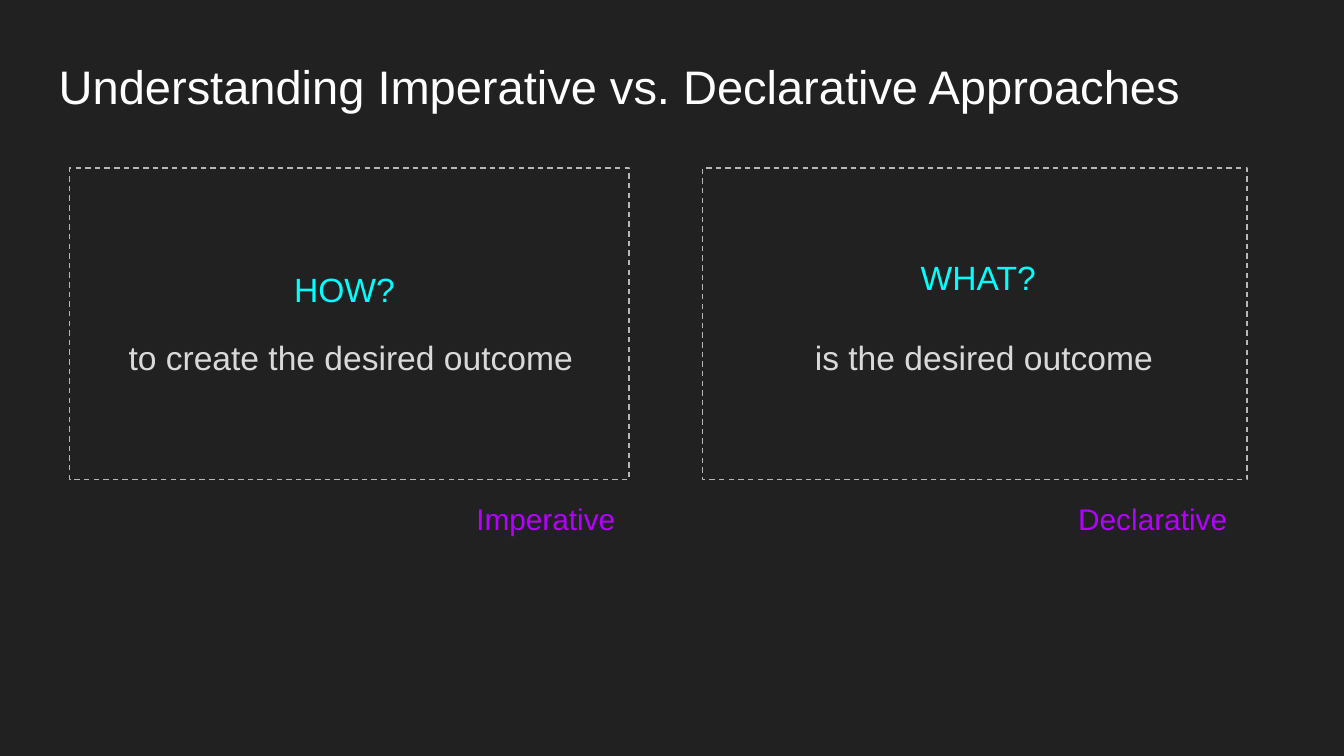
from pptx import Presentation
from pptx.util import Cm, Pt
from pptx.dml.color import RGBColor as Rgb
from pptx.enum.dml import MSO_LINE as Dash
from pptx.enum.shapes import MSO_SHAPE as Shape
from pptx.enum.text import MSO_ANCHOR as Anchor, PP_ALIGN as Align

TITLE = "Understanding Imperative vs. Declarative Approaches"
BACK, WHITE, CYAN, PURPLE, PALE, GRAY = (
    "212121", "FFFFFF", "00FFFF", "B400FF", "D9D9D9", "B7B7B7")
TOP, HIGH, ROW = 3.18, 5.89, 1.22
SIDES = [
    {"frame": (1.32, 10.57),
     "texts": [
         ("Imperative", (7.82, 9.22, 4.06, ROW), 16, PURPLE, Align.RIGHT),
         ("HOW?", (5.31, 4.83, 3.23, ROW), 18, CYAN, Align.LEFT),
         ("to create the desired outcome", (2.18, 6.12, 9.07, 2 * ROW),
          18, PALE, Align.LEFT)]},
    {"frame": (13.28, 10.29),
     "texts": [
         ("Declarative ", (19.41, 9.22, 4.19, ROW), 16, PURPLE, Align.RIGHT),
         ("WHAT?", (17.15, 4.6, 3.23, ROW), 18, CYAN, Align.LEFT),
         ("is the desired outcome", (14.86, 6.12, 7.47, ROW),
          18, PALE, Align.CENTER)]},
]


def paint(code):
    return Rgb.from_string(code)


def write(shapes, text, place, size, color, align, anchor=Anchor.TOP):
    frame = shapes.add_textbox(*map(Cm, place)).text_frame
    frame.word_wrap = True
    frame.vertical_anchor = anchor
    frame.margin_left = frame.margin_right = Cm(0.25)
    frame.margin_top = frame.margin_bottom = Cm(0.25)
    para = frame.paragraphs[0]
    para.alignment = align
    run = para.add_run()
    run.text = text
    run.font.name = "Arial"
    run.font.size = Pt(size)
    run.font.color.rgb = paint(color)


def outline(shapes, left, width):
    box = shapes.add_shape(
        Shape.RECTANGLE, Cm(left), Cm(TOP), Cm(width), Cm(HIGH))
    box.shadow.inherit = False
    box.fill.background()
    box.line.color.rgb = paint(GRAY)
    box.line.width = Pt(0.75)
    box.line.dash_style = Dash.DASH


def main():
    deck = Presentation()
    deck.slide_width, deck.slide_height = Cm(25.4), Cm(14.29)
    slide = deck.slides.add_slide(deck.slide_layouts[6])
    fill = slide.background.fill
    fill.solid()
    fill.fore_color.rgb = paint(BACK)
    write(slide.shapes, TITLE, (0.86, 0.81, 23.67, 1.6), 25.2, WHITE,
          Align.LEFT, Anchor.BOTTOM)
    for side in SIDES:
        group = slide.shapes.add_group_shape().shapes
        outline(group, *side["frame"])
        for item in side["texts"]:
            write(group, *item)
    deck.save("out.pptx")


if __name__ == "__main__":
    main()
